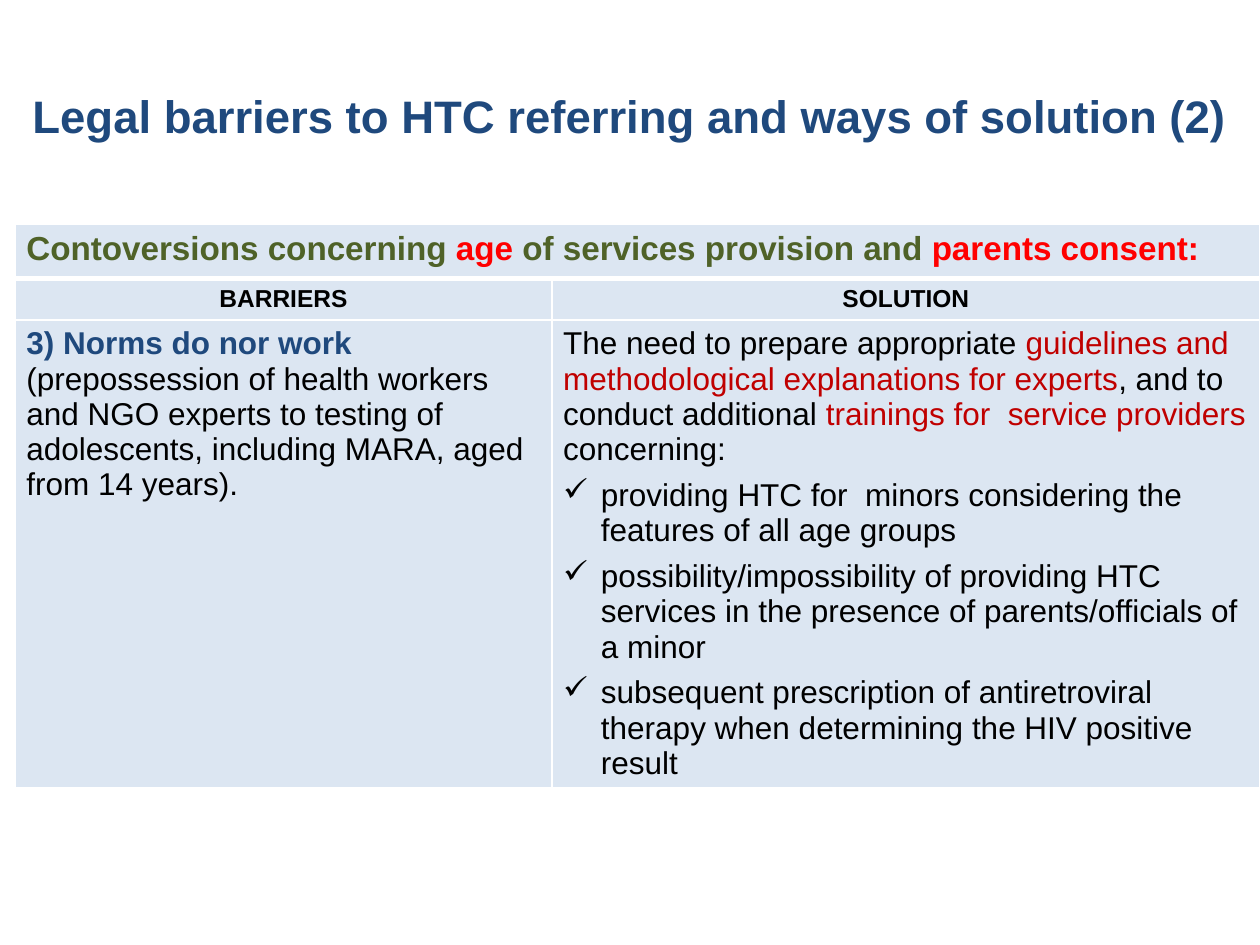
import pptx
import pptx.util
import pptx.dml.color
import pptx.enum.text
import pptx.oxml
import lxml.etree
from pptx.oxml.ns import qn

THEME = {
    "font": "Arial",
    "navy": "1F497D", "green": "4F6228", "red": "FF0000", "dark_red": "C00000",
    "black": "000000", "pale": "DCE6F2", "white": "FFFFFF",
    "title": 26, "banner": 19, "heading": 14, "body": 18,
}
ALIGN = pptx.enum.text.PP_ALIGN
Inches, Pt = pptx.util.Inches, pptx.util.Pt
rgb = pptx.dml.color.RGBColor.from_string


def add_runs(paragraph, size, runs, align=ALIGN.LEFT):
    """Each run is (text, colour name, bold)."""
    paragraph.alignment = align
    for text, colour, bold in runs:
        run = paragraph.add_run()
        run.text = text
        run.font.name = THEME["font"]
        run.font.size = Pt(THEME[size])
        run.font.bold = bold
        run.font.color.rgb = rgb(THEME[colour])


def style_cell(cell, bottom_width):
    """Pale fill with white rules on all four sides."""
    cell.margin_left = cell.margin_right = Inches(0.09)
    properties = cell._tc.get_or_add_tcPr()
    for side, width in (("L", 1), ("R", 1), ("T", 1), ("B", bottom_width)):
        rule = lxml.etree.SubElement(properties, qn(f"a:ln{side}"), w=str(Pt(width)))
        fill = lxml.etree.SubElement(rule, qn("a:solidFill"))
        lxml.etree.SubElement(fill, qn("a:srgbClr"), val=THEME["white"])
    cell.fill.solid()
    cell.fill.fore_color.rgb = rgb(THEME["pale"])


presentation = pptx.Presentation()
presentation.slide_width, presentation.slide_height = Inches(10), Inches(7.5)
slide = presentation.slides.add_slide(presentation.slide_layouts[5])

# Title across the full width
title = slide.shapes.title
title.left, title.top = 0, Inches(0.29)
title.width, title.height = presentation.slide_width, Inches(1.25)
title.text_frame.vertical_anchor = pptx.enum.text.MSO_ANCHOR.MIDDLE
add_runs(title.text_frame.paragraphs[0], "title",
         [("Legal barriers to HTC referring and ways of solution (2)", "navy", True)],
         ALIGN.CENTER)

# Table grid
column_widths = [4.26, 5.62]
row_heights = [0.43, 0.33, 2.99]
table = slide.shapes.add_table(
    len(row_heights), len(column_widths), Inches(0.12), Inches(1.78),
    Inches(sum(column_widths)), Inches(sum(row_heights))).table
table.first_row = table.horz_banding = False
for column, width in zip(table.columns, column_widths):
    column.width = Inches(width)
for index, (row, height) in enumerate(zip(table.rows, row_heights)):
    row.height = Inches(height)
    for cell in row.cells:
        style_cell(cell, 3 if index == 0 else 1)

# Banner row
banner = table.cell(0, 0)
banner.merge(table.cell(0, 1))
add_runs(banner.text_frame.paragraphs[0], "banner", [
    ("Contoversions concerning ", "green", True),
    ("age", "red", True),
    (" of services provision and ", "green", True),
    ("parents consent:", "red", True),
])

# Column headings
for index, heading in enumerate(["BARRIERS", "SOLUTION"]):
    add_runs(table.cell(1, index).text_frame.paragraphs[0], "heading",
             [(heading, "black", True)], ALIGN.CENTER)

# Barrier
add_runs(table.cell(2, 0).text_frame.paragraphs[0], "body", [
    ("3) Norms do nor work ", "navy", True),
    (" (prepossession of health workers and NGO experts to testing of  adolescents, "
     "including MARA, aged from 14 years).", "black", False),
])

# Solution, with its checklist
solution = table.cell(2, 1).text_frame
add_runs(solution.paragraphs[0], "body", [
    ("The need to prepare appropriate ", "black", False),
    ("guidelines and methodological explanations for experts", "dark_red", False),
    (", and to conduct additional ", "black", False),
    ("trainings for  service providers ", "dark_red", False),
    ("concerning:", "black", False),
])
for topic in [
    "providing HTC for  minors considering the features of all age groups",
    "possibility/impossibility of providing HTC services in the presence of "
    "parents/officials of a minor",
    "subsequent prescription of antiretroviral therapy when determining the "
    "HIV positive result",
]:
    item = solution.add_paragraph()
    item.space_before = Pt(6)
    add_runs(item, "body", [(topic, "black", False)])
    layout = item._p.get_or_add_pPr()
    layout.set("marL", str(Inches(0.3)))
    layout.set("indent", str(-Inches(0.3)))
    lxml.etree.SubElement(layout, qn("a:buChar"), char="✓")

presentation.save("out.pptx")
